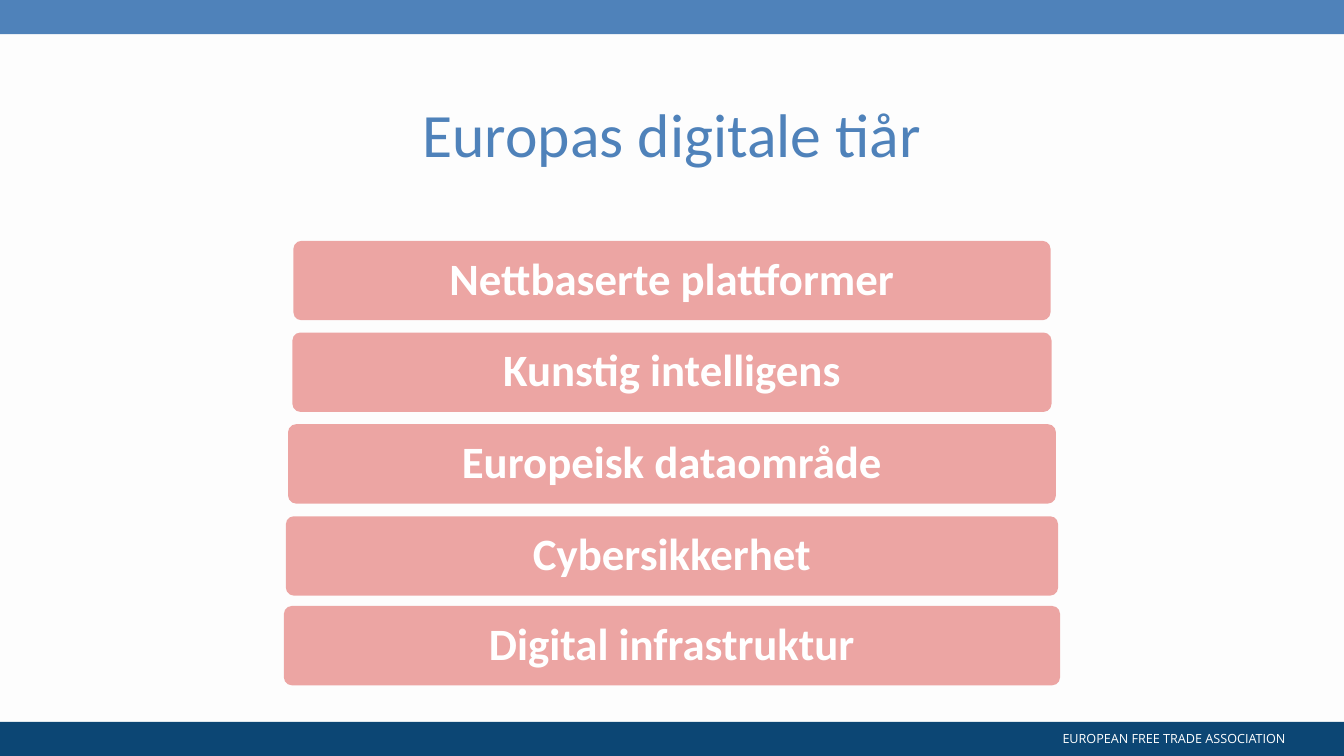
from lxml.etree import SubElement
from pptx import Presentation
from pptx.dml.color import RGBColor
from pptx.enum.shapes import MSO_SHAPE as Shape
from pptx.enum.text import MSO_ANCHOR as Anchor, PP_ALIGN as Align
from pptx.oxml.ns import qn
from pptx.util import Cm, Pt

WIDE, HIGH = 33.87, 19.05


def paint(fill, code, alpha=100):
    fill.solid()
    fill.fore_color.rgb = RGBColor.from_string(code)
    if alpha < 100:
        tone = fill._xPr.find(qn("a:solidFill"))[0]
        SubElement(tone, qn("a:alpha")).set("val", str(alpha * 1000))


def write(frame, text, face, size, code, inset, bold=False):
    frame.word_wrap = True
    frame.vertical_anchor = Anchor.MIDDLE
    frame.margin_left = frame.margin_right = Cm(inset[0])
    frame.margin_top = frame.margin_bottom = Cm(inset[1])
    para = frame.paragraphs[0]
    para.text = text
    para.alignment = Align.CENTER
    para.line_spacing = 0.9 if size > 9 else 1.0
    para.font.name = face
    para.font.size = Pt(size)
    para.font.bold = bold
    paint(para.font.fill, code)


deck = Presentation()
deck.slide_width, deck.slide_height = Cm(WIDE), Cm(HIGH)
slide = deck.slides.add_slide(deck.slide_layouts[6])
paint(slide.background.fill, "FDFDFD")
shapes = slide.shapes

band = 0.86
for top, code in [(HIGH - band, "0C4674"), (0, "4F82BA")]:
    strip = shapes.add_shape(Shape.RECTANGLE, 0, Cm(top), Cm(WIDE), Cm(band))
    strip.shadow.inherit = False
    strip.line.fill.background()
    paint(strip.fill, code)

foot = shapes.add_textbox(Cm(25.32), Cm(18.29), Cm(8.53), Cm(0.64))
write(foot.text_frame, "EUROPEAN FREE TRADE ASSOCIATION", "Open Sans", 9,
      "FFFFFF", (0.25, 0.13))

title = shapes.add_textbox(0, Cm(band), Cm(WIDE), Cm(5.21))
write(title.text_frame, "Europas digitale tiår", "Calibri", 44,
      "4F82BA", (0.46, 0.46))

topics = [
    ("Nettbaserte plattformer", 6.07, 19.08),
    ("Kunstig intelligens", 8.38, 19.13),
    ("Europeisk dataområde", 10.69, 19.35),
    ("Cybersikkerhet", 13.01, 19.46),
    ("Digital infrastruktur", 15.27, 19.56),
]
for text, top, width in topics:
    box = shapes.add_shape(Shape.ROUNDED_RECTANGLE, Cm((WIDE - width) / 2),
                           Cm(top), Cm(width), Cm(2))
    box.adjustments[0] = 0.1
    box.shadow.inherit = False
    box.line.fill.background()
    paint(box.fill, "DC514E", 51)
    write(box.text_frame, text, "Calibri", 32, "FFFFFF", (0.28, 0.2), True)

deck.save("out.pptx")
